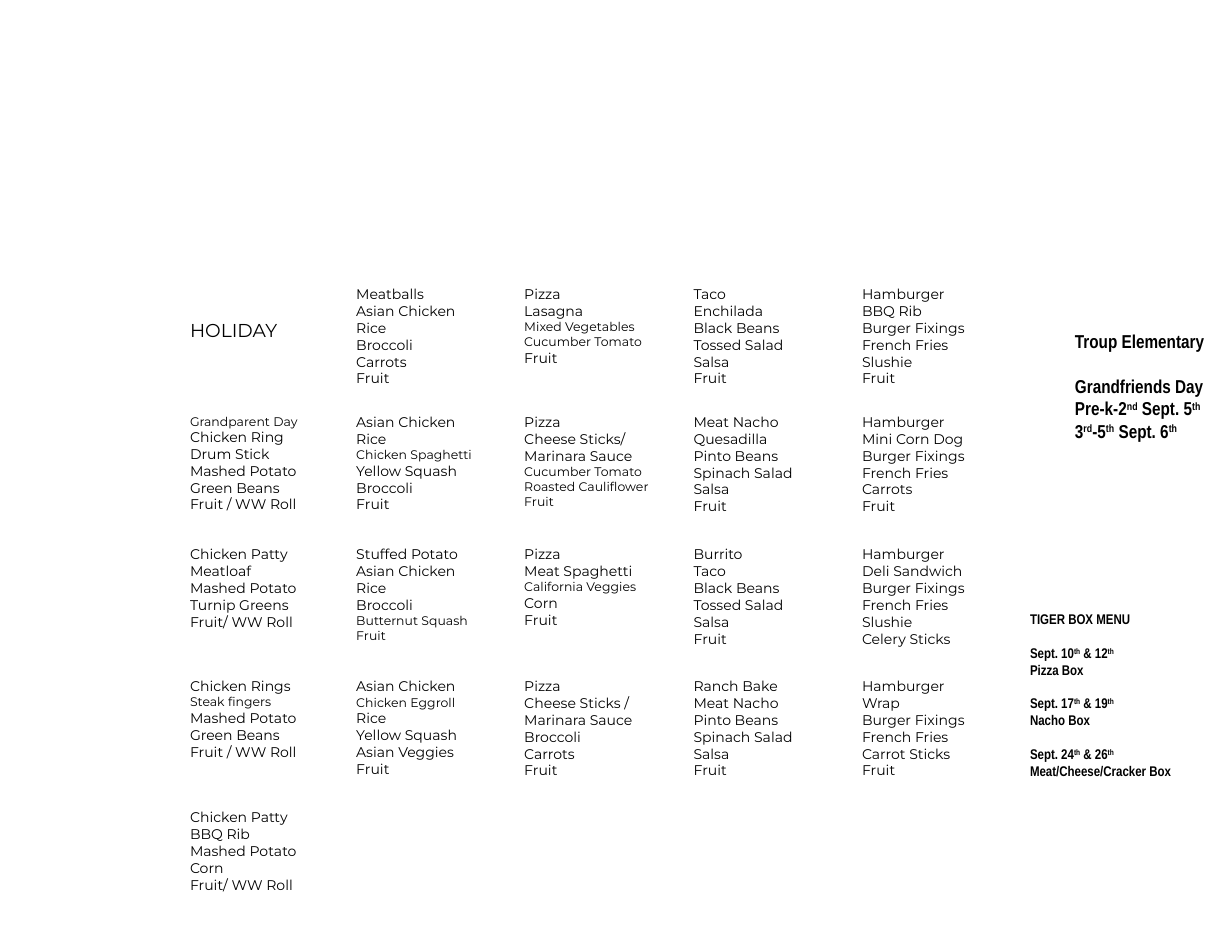
from pptx import Presentation
from pptx.dml.color import RGBColor
from pptx.enum.text import MSO_ANCHOR, MSO_AUTO_SIZE, PP_ALIGN
from pptx.util import Cm, Pt

BLACK = RGBColor(0, 0, 0)
MENU_FONT = "Montserrat"
NOTE_FONT = "Arial Narrow"
FRAME = {
    "word_wrap": True,
    "auto_size": MSO_AUTO_SIZE.SHAPE_TO_FIT_TEXT,
    "vertical_anchor": MSO_ANCHOR.TOP,
}

DAY_LEFTS = [4.06, 7.83, 11.64, 15.48, 19.3]
WEEK_TOPS = [6.35, 9.25, 12.25, 15.24, 18.21]
MEAL_WIDTH = 3.38
MEAL_SIZE, SMALL_SIZE = 9, 8
SMALL = "*"
INSET = 0.13

WEEKS = [
    [
        "",
        "Meatballs|Asian Chicken|Rice|Broccoli|Carrots|Fruit",
        "Pizza|Lasagna|*Mixed Vegetables|*Cucumber Tomato|Fruit",
        "Taco|Enchilada|Black Beans|Tossed Salad|Salsa|Fruit",
        "Hamburger|BBQ Rib|Burger Fixings|French Fries|Slushie|Fruit",
    ],
    [
        "*Grandparent Day|Chicken Ring|Drum Stick|Mashed Potato|Green Beans|Fruit / WW Roll",
        "Asian Chicken|Rice|*Chicken Spaghetti|Yellow Squash|Broccoli|Fruit",
        "Pizza|Cheese Sticks/|Marinara Sauce|*Cucumber Tomato|*Roasted Cauliflower|*Fruit",
        "Meat Nacho|Quesadilla|Pinto Beans|Spinach Salad|Salsa|Fruit",
        "Hamburger|Mini Corn Dog|Burger Fixings|French Fries|Carrots|Fruit",
    ],
    [
        "Chicken Patty|Meatloaf|Mashed Potato|Turnip Greens|Fruit/ WW Roll",
        "Stuffed Potato|Asian Chicken|Rice|Broccoli|*Butternut Squash|*Fruit",
        "Pizza|Meat Spaghetti|*California Veggies|Corn|Fruit",
        "Burrito|Taco|Black Beans|Tossed Salad|Salsa|Fruit",
        "Hamburger|Deli Sandwich|Burger Fixings|French Fries|Slushie|Celery Sticks",
    ],
    [
        "Chicken Rings|*Steak fingers|Mashed Potato|Green Beans|Fruit / WW Roll",
        "Asian Chicken|*Chicken Eggroll|Rice|Yellow Squash|Asian Veggies|Fruit",
        "Pizza|Cheese Sticks /|Marinara Sauce|Broccoli|Carrots|Fruit",
        "Ranch Bake|Meat Nacho|Pinto Beans|Spinach Salad|Salsa|Fruit",
        "Hamburger|Wrap|Burger Fixings|French Fries|Carrot Sticks|Fruit",
    ],
    ["Chicken Patty|BBQ Rib|Mashed Potato|Corn|Fruit/ WW Roll"],
]

SCHOOL_EVENTS = [
    ["Troup Elementary"],
    ["Grandfriends Day", "Pre-k-2^nd^ Sept. 5^th", "3^rd^-5^th^ Sept. 6^th"],
]
TIGER_BOXES = [
    ["TIGER BOX MENU"],
    ["Sept. 10^th^ & 12^th", "Pizza Box"],
    ["Sept. 17^th^ & 19^th", "Nacho Box"],
    ["Sept. 24^th^ & 26^th", "Meat/Cheese/Cracker Box"],
]


def format_frame(sp, inset):
    tf = sp.text_frame
    for name, value in FRAME.items():
        setattr(tf, name, value)
    tf.margin_top = Cm(inset)
    return tf


def add_cell(s, left, top, height, lines, inset=INSET):
    x, y = Cm(left), Cm(top)
    right, bottom = x + Cm(MEAL_WIDTH), y + Cm(height)
    outline = s.shapes.build_freeform(x, y)
    outline.add_line_segments([(right, y), (right, bottom), (x, bottom)])
    sp = outline.convert_to_shape()
    sp.shadow.inherit = False
    sp.fill.background()
    sp.line.fill.background()
    tf = format_frame(sp, inset)
    for text, size in lines:
        p = next_paragraph(tf)
        p.alignment = PP_ALIGN.LEFT
        add_run(p, text, size, MENU_FONT)


def next_paragraph(tf):
    p = tf.paragraphs[0]
    return tf.add_paragraph() if p.runs else p


def add_run(p, text, size, font, bold=False):
    r = p.add_run()
    r.text = text
    style = {"name": font, "size": Pt(size), "bold": bold}
    for name, value in style.items():
        setattr(r.font, name, value)
    r.font.color.rgb = BLACK
    return r


def add_meal(s, left, top, dishes):
    lines = [
        (dish.lstrip(SMALL), SMALL_SIZE if dish.startswith(SMALL) else MEAL_SIZE)
        for dish in dishes.split("|")
    ]
    height = 2 * INSET + 0.043 * sum(size for _, size in lines)
    add_cell(s, left, top, height, lines)


def add_note(s, box, groups, size, inset):
    sp = s.shapes.add_textbox(*map(Cm, box))
    tf = format_frame(sp, inset)
    for i, group in enumerate(groups):
        for j, line in enumerate(group):
            p = next_paragraph(tf)
            if i and not j:
                p.space_before = Pt(size * 1.2)
            for k, text in enumerate(line.split("^")):
                r = add_run(p, text, size, NOTE_FONT, True)
                if k % 2:
                    r.font._element.set("baseline", "30000")


def main():
    prs = Presentation()
    prs.slide_width, prs.slide_height = Cm(27.94), Cm(21.59)
    s = prs.slides.add_slide(prs.slide_layouts[6])

    for top, meals in zip(WEEK_TOPS, WEEKS):
        for left, dishes in zip(DAY_LEFTS, meals):
            if dishes:
                add_meal(s, left, top, dishes)

    add_cell(s, DAY_LEFTS[0], WEEK_TOPS[0], 1.55, [("HOLIDAY", 12)], inset=0.89)

    add_note(s, (24.13, 6.99, 3.61, 3.2), SCHOOL_EVENTS, 12, 0.49)
    add_note(s, (23.11, 13.34, 4.65, 5.26), TIGER_BOXES, 9, 0.51)
    prs.save("out.pptx")


if __name__ == "__main__":
    main()
